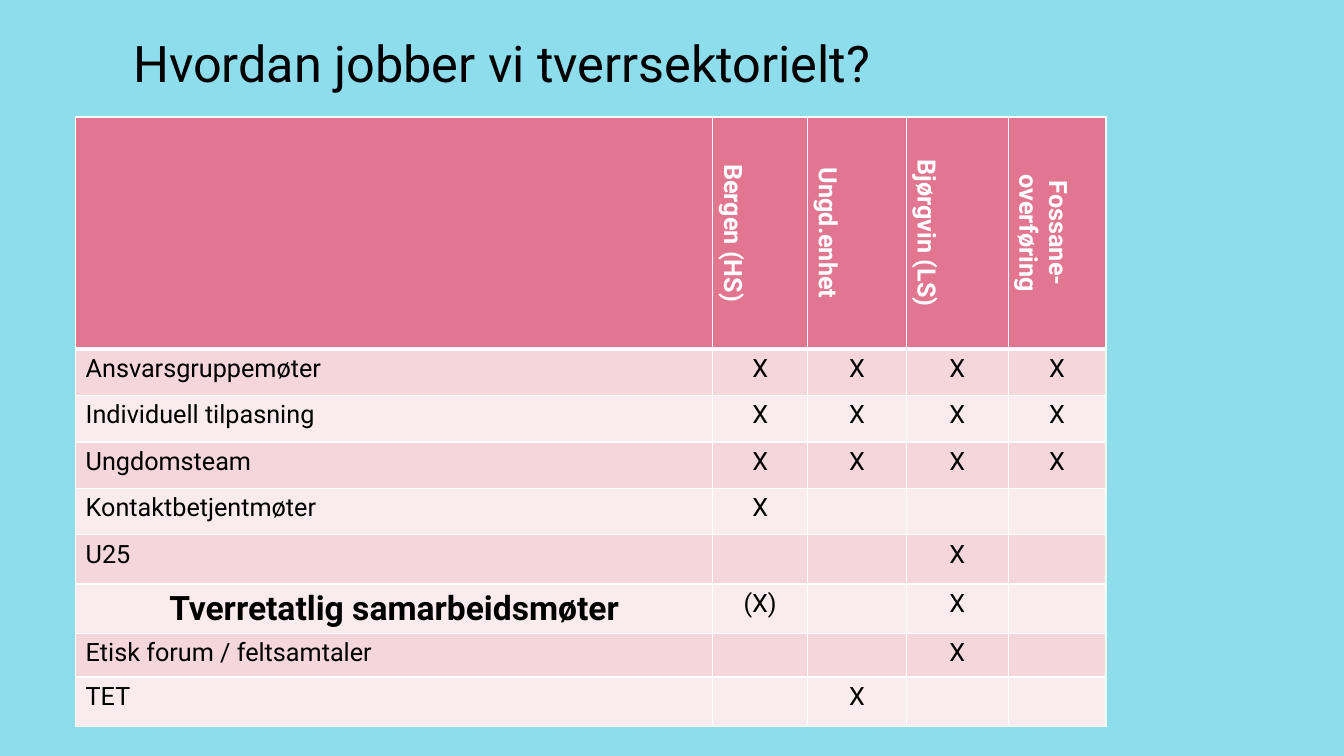
from dataclasses import dataclass

from lxml.etree import SubElement
from pptx import Presentation
from pptx.dml.color import RGBColor
from pptx.enum.text import MSO_ANCHOR as Anchor, PP_ALIGN as Align
from pptx.oxml.ns import qn
from pptx.util import Inches, Pt


@dataclass(frozen=True)
class Theme:
    font: str = "Roboto"
    background: str = "8EDDED"
    text: str = "000000"
    light: str = "FEFFFF"
    header: str = "E2758F"
    bands: tuple = ("F4D6DB", "FAECEE")
    title_size: int = 36
    emphasis_size: int = 24
    body_size: int = 18
    border: int = 1
    header_border: int = 3


# Content: each meeting with its mark per column
TITLE = "Hvordan jobber vi tverrsektorielt?"
PARTNERS = ["Bergen (HS)", "Ungd.enhet", "Bjørgvin (LS)", "Fossane-overføring"]
EMPHASIZED = "Tverretatlig samarbeidsmøter"
MEETINGS = [
    ("Ansvarsgruppemøter", "X", "X", "X", "X"),
    ("Individuell tilpasning", "X", "X", "X", "X"),
    ("Ungdomsteam", "X", "X", "X", "X"),
    ("Kontaktbetjentmøter", "X", "", "", ""),
    ("U25", "", "", "X", ""),
    (EMPHASIZED, "(X)", "", "X", ""),
    ("Etisk forum / feltsamtaler", "", "", "X", ""),
    ("TET", "", "X", "", ""),
]
COLUMN_WIDTHS = [6.32, 0.94, 0.98, 1.01, 0.97]
ROW_HEIGHTS = [1.86, 0.46, 0.46, 0.46, 0.46, 0.49, 0.49, 0.43, 0.49]


def write_text(text_frame, text, *, font, size, color, bold=False,
               align=Align.LEFT, spacing=None):
    paragraph = text_frame.paragraphs[0]
    paragraph.alignment = align
    paragraph.line_spacing = spacing
    # Empty cells take their size from the paragraph
    paragraph.font.size = Pt(size)
    if text:
        run = paragraph.add_run()
        run.text = text
        run.font.name = font
        run.font.size = Pt(size)
        run.font.bold = bold
        run.font.color.rgb = RGBColor.from_string(color)


class SlideBuilder:
    def __init__(self, presentation, theme):
        self.theme = theme
        self.slide = presentation.slides.add_slide(presentation.slide_layouts[5])
        fill = self.slide.background.fill
        fill.solid()
        fill.fore_color.rgb = RGBColor.from_string(theme.background)

    def title(self, text, left, top, width, height):
        shape = self.slide.shapes.title
        shape.left, shape.top = Inches(left), Inches(top)
        shape.width, shape.height = Inches(width), Inches(height)
        shape.text_frame.vertical_anchor = Anchor.TOP
        write_text(shape.text_frame, text, font=self.theme.font,
                   size=self.theme.title_size, color=self.theme.text, spacing=0.89)

    def border(self, cell, side, width):
        properties = cell._tc.get_or_add_tcPr()
        line = SubElement(properties, qn(f"a:ln{side}"), w=str(Pt(width)))
        solid = SubElement(line, qn("a:solidFill"))
        SubElement(solid, qn("a:srgbClr"), val=self.theme.light)

    def cell(self, cell, text, fill, *, bottom, top, vertical=False, **text_format):
        for side, width in zip("LRTB", (self.theme.border, self.theme.border, top, bottom)):
            self.border(cell, side, width)
        cell.fill.solid()
        cell.fill.fore_color.rgb = RGBColor.from_string(fill)
        if vertical:
            cell._tc.get_or_add_tcPr().set("vert", "vert")
        write_text(cell.text_frame, text, font=self.theme.font, **text_format)

    def table(self, left, top):
        theme = self.theme
        table = self.slide.shapes.add_table(
            len(ROW_HEIGHTS), len(COLUMN_WIDTHS), Inches(left), Inches(top),
            Inches(sum(COLUMN_WIDTHS)), Inches(sum(ROW_HEIGHTS))).table
        for column, width in zip(table.columns, COLUMN_WIDTHS):
            column.width = Inches(width)
        for row, height in zip(table.rows, ROW_HEIGHTS):
            row.height = Inches(height)

        # Header row with vertical labels
        for column, text in enumerate(["", *PARTNERS]):
            self.cell(table.cell(0, column), text, theme.header,
                      top=theme.border, bottom=theme.header_border,
                      vertical=column > 0, size=theme.body_size,
                      color=theme.light, bold=True, align=Align.CENTER)

        # Banded rows: one meeting each
        for row, meeting in enumerate(MEETINGS, start=1):
            for column, text in enumerate(meeting):
                emphasized = text == EMPHASIZED
                centered = column > 0 or emphasized
                self.cell(table.cell(row, column), text, theme.bands[(row - 1) % 2],
                          top=theme.header_border if row == 1 else theme.border,
                          bottom=theme.border,
                          size=theme.emphasis_size if emphasized else theme.body_size,
                          color=theme.text, bold=emphasized,
                          align=Align.CENTER if centered else Align.LEFT)


def main():
    presentation = Presentation()
    presentation.slide_width = Inches(13.33)
    presentation.slide_height = Inches(7.5)
    builder = SlideBuilder(presentation, Theme())
    builder.title(TITLE, 1.22, 0.34, 10.5, 1.62)
    builder.table(0.75, 1.16)
    presentation.save("out.pptx")


if __name__ == "__main__":
    main()
